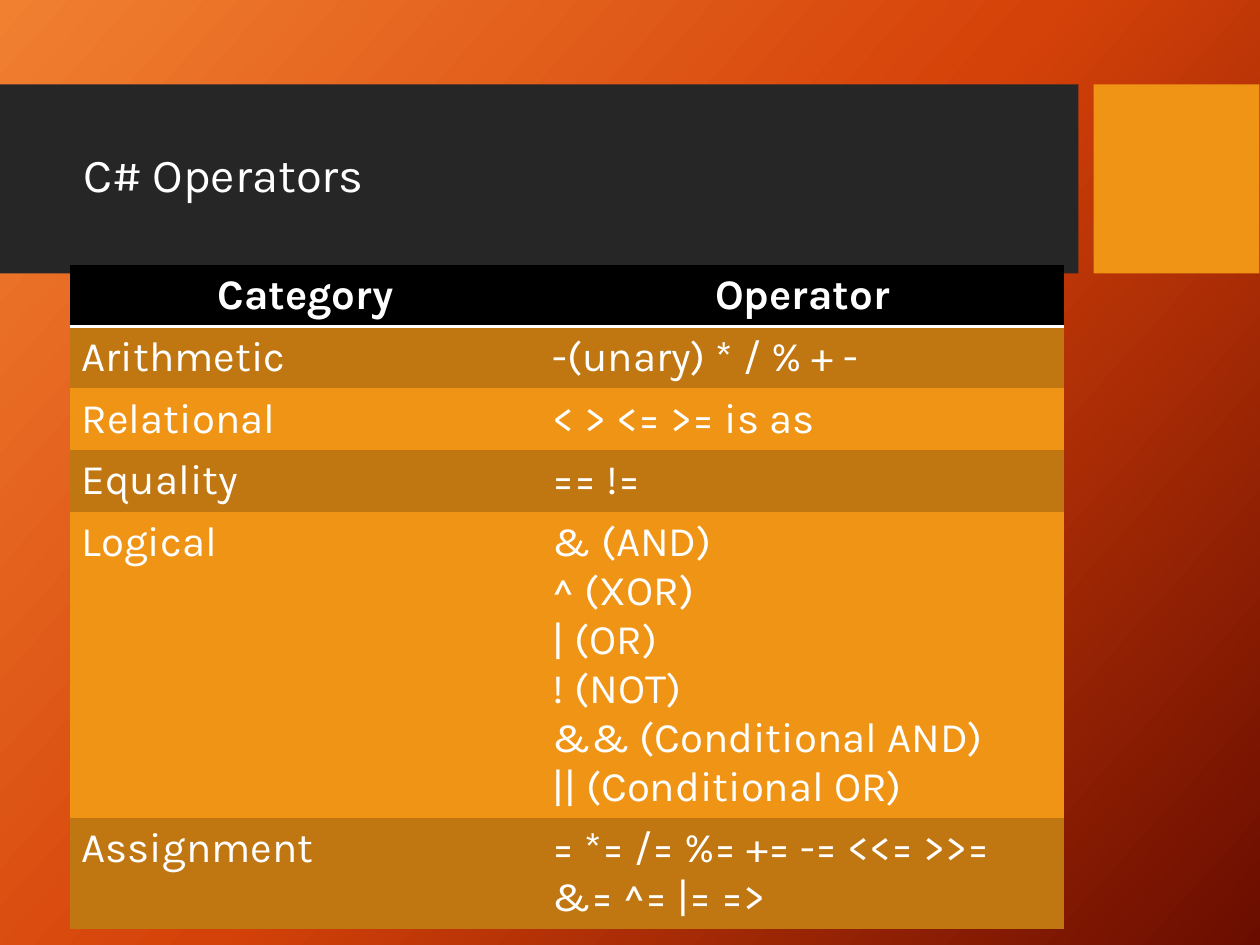
from dataclasses import dataclass

from lxml.etree import SubElement
from pptx import Presentation
from pptx.dml.color import RGBColor
from pptx.enum.shapes import MSO_SHAPE
from pptx.enum.text import MSO_ANCHOR, MSO_AUTO_SIZE, PP_ALIGN
from pptx.oxml import parse_xml
from pptx.oxml.ns import nsdecls, qn
from pptx.slide import Slide
from pptx.table import Table, _Cell
from pptx.text.text import TextFrame
from pptx.util import Pt

FONT = "Karla"
WHITE = RGBColor(0xFF, 0xFF, 0xFF)
BLACK = RGBColor(0x00, 0x00, 0x00)
CHARCOAL = RGBColor(0x26, 0x26, 0x26)
ORANGE = RGBColor(0xF0, 0x94, 0x15)
DARK_ORANGE = RGBColor(0xC0, 0x77, 0x11)
BACKGROUND_STOPS = (
    (0, RGBColor(0xF1, 0x80, 0x31)),
    (50, RGBColor(0xD5, 0x42, 0x09)),
    (100, RGBColor(0x6A, 0x0D, 0x00)),
)
BACKGROUND_ANGLE = 42
NO_STYLE_NO_GRID = "{2D5ABB26-0587-4C30-8999-92F81FD0307C}"

BAND_TOP, BAND_HEIGHT = 48.24, 108
COLUMN_WIDTHS = (269.28, 298.8)
ROW_HEIGHT = 29.52


@dataclass(frozen=True)
class Band:
    left: float
    width: float
    color: RGBColor


@dataclass(frozen=True)
class OperatorRow:
    category: str
    operators: str


BANDS = (Band(0, 616.32, CHARCOAL), Band(624.96, 94.68, ORANGE))
HEADER = OperatorRow("Category", "Operator")
OPERATOR_ROWS = (
    OperatorRow("Arithmetic", "-(unary) * / % + -"),
    OperatorRow("Relational", "< > <= >= is as"),
    OperatorRow("Equality", "== !="),
    OperatorRow(
        "Logical",
        "& (AND)\n^ (XOR)\n| (OR)\n! (NOT)\n"
        "&& (Conditional AND)\n|| (Conditional OR)",
    ),
    OperatorRow("Assignment", "= *= /= %= += -= <<= >>= &= ^= |= =>"),
)


def paint_background(slide: Slide) -> None:
    stops = "".join(
        f'<a:gs pos="{percent * 1000}"><a:srgbClr val="{color}"/></a:gs>'
        for percent, color in BACKGROUND_STOPS
    )
    gradient = parse_xml(
        f'<a:gradFill {nsdecls("a")} rotWithShape="1"><a:gsLst>{stops}</a:gsLst>'
        f'<a:lin ang="{BACKGROUND_ANGLE * 60000}" scaled="0"/></a:gradFill>'
    )
    fill = slide.background.fill
    fill.solid()
    solid = slide.element.find(".//" + qn("p:bgPr")).find(qn("a:solidFill"))
    solid.getparent().replace(solid, gradient)


def draw_band(slide: Slide, band: Band) -> None:
    shape = slide.shapes.add_shape(
        MSO_SHAPE.RECTANGLE,
        Pt(band.left), Pt(BAND_TOP), Pt(band.width), Pt(BAND_HEIGHT),
    )
    shape.shadow.inherit = False
    shape.fill.solid()
    shape.fill.fore_color.rgb = band.color
    shape.line.fill.background()


def format_text(frame: TextFrame, size: float, bold: bool, align: PP_ALIGN) -> None:
    for paragraph in frame.paragraphs:
        paragraph.alignment = align
        for run in paragraph.runs:
            run.font.name = FONT
            run.font.size = Pt(size)
            run.font.bold = bold
            run.font.color.rgb = WHITE


def place_title(slide: Slide) -> None:
    title = slide.shapes.title
    title.left, title.top, title.width, title.height = (
        Pt(40.32), Pt(59.04), Pt(568.08), Pt(84.96)
    )
    frame = title.text_frame
    frame.text = "C# Operators"
    frame.word_wrap = True
    frame.auto_size = MSO_AUTO_SIZE.NONE
    frame.vertical_anchor = MSO_ANCHOR.MIDDLE
    frame.paragraphs[0].line_spacing = 0.9
    format_text(frame, 27, False, PP_ALIGN.LEFT)
    # The title lies in front of the bands.
    tree = title.element.getparent()
    tree.append(title.element)


def add_bottom_border(cell: _Cell, color: RGBColor, width: float) -> None:
    properties = cell._tc.get_or_add_tcPr()
    border = SubElement(properties, qn("a:lnB"), w=str(int(Pt(width))))
    properties.insert(0, border)
    solid = SubElement(border, qn("a:solidFill"))
    SubElement(solid, qn("a:srgbClr"), val=str(color))


def fill_row(table: Table, index: int, row: OperatorRow, color: RGBColor) -> None:
    is_header = index == 0
    table.rows[index].height = Pt(ROW_HEIGHT)
    for column, text in enumerate((row.category, row.operators)):
        cell = table.cell(index, column)
        cell.margin_left = cell.margin_right = Pt(6.75)
        cell.margin_top = cell.margin_bottom = Pt(3.6)
        cell.text_frame.text = text
        format_text(
            cell.text_frame, 24, is_header,
            PP_ALIGN.CENTER if is_header else PP_ALIGN.LEFT,
        )
        cell.fill.solid()
        cell.fill.fore_color.rgb = color
        if is_header:
            add_bottom_border(cell, WHITE, 2)


def draw_operator_table(slide: Slide) -> None:
    row_count = len(OPERATOR_ROWS) + 1
    table = slide.shapes.add_table(
        row_count, len(COLUMN_WIDTHS), Pt(39.9), Pt(151.5),
        Pt(sum(COLUMN_WIDTHS)), Pt(ROW_HEIGHT * row_count),
    ).table
    table._tbl.tblPr.find(qn("a:tableStyleId")).text = NO_STYLE_NO_GRID
    for column, width in zip(table.columns, COLUMN_WIDTHS):
        column.width = Pt(width)
    fill_row(table, 0, HEADER, BLACK)
    for index, row in enumerate(OPERATOR_ROWS, start=1):
        fill_row(table, index, row, DARK_ORANGE if index % 2 else ORANGE)


def main() -> None:
    presentation = Presentation()
    presentation.slide_width, presentation.slide_height = Pt(720), Pt(540)
    slide = presentation.slides.add_slide(presentation.slide_layouts[5])
    paint_background(slide)
    for band in BANDS:
        draw_band(slide, band)
    place_title(slide)
    draw_operator_table(slide)
    presentation.save("out.pptx")


if __name__ == "__main__":
    main()
